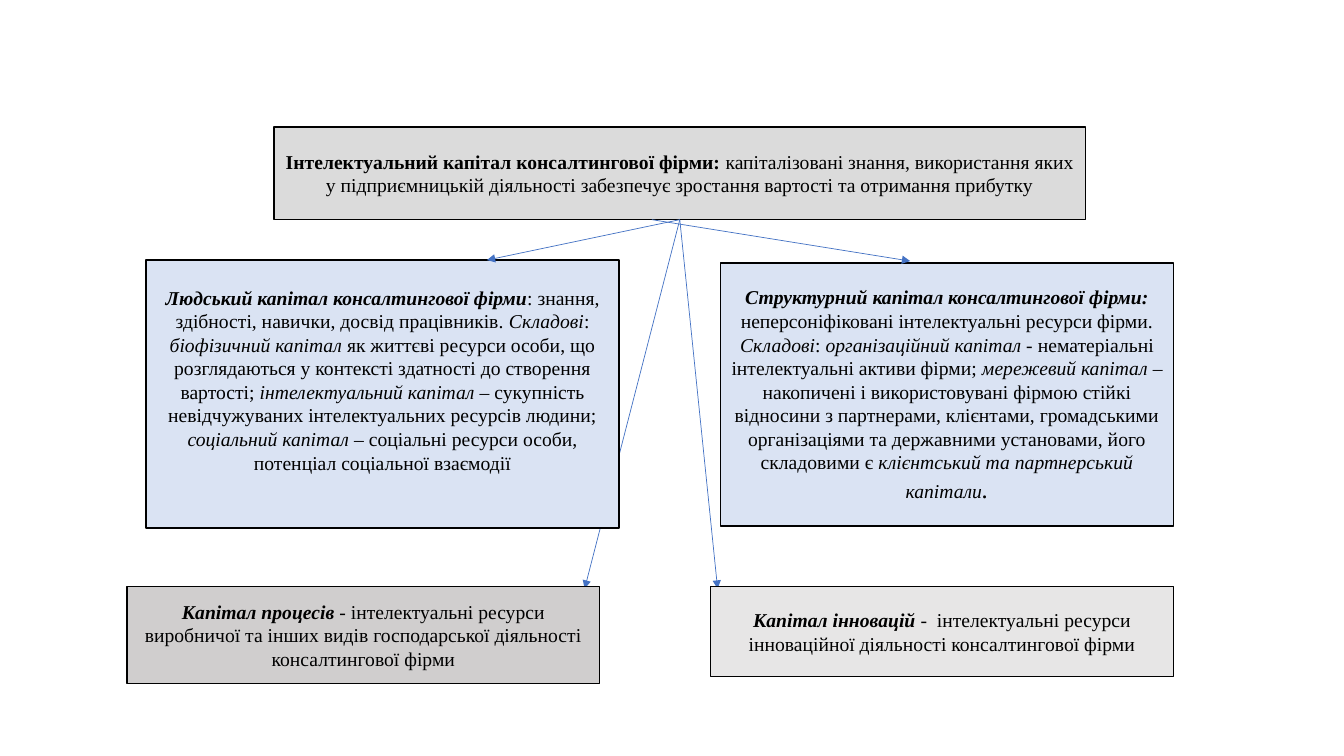
from collections import namedtuple

from lxml import etree
from pptx import Presentation
from pptx.dml import color
from pptx.enum import shapes, text
from pptx.oxml import ns
from pptx.util import Pt

Box = namedtuple("Box", "left top width height")

FONT = "Times New Roman"
BLACK, BLUE, ARROW_BLUE = "000000", "DAE3F3", "4472C4"

# Run formats
PLAIN = {"bold": False, "italic": False, "size": Pt(14)}
BOLD = {**PLAIN, "bold": True}
ITALIC = {**PLAIN, "italic": True}
TERM = {**BOLD, "italic": True}
FULL_STOP = {**ITALIC, "size": Pt(18)}

# Places of the boxes, in points
CAPITAL = Box(195.8, 90.7, 579.6, 66.2)
HUMAN = Box(104.4, 185.8, 337.7, 191.5)
STRUCTURAL = Box(514.8, 187.9, 323.3, 187.9)
PROCESSES = Box(90.7, 419, 337.7, 69.1)
INNOVATIONS = Box(507.6, 419, 330.5, 64.1)

CAPITAL_TEXT = [
    (BOLD, "Інтелектуальний капітал консалтингової фірми: "),
    (PLAIN, "капіталізовані знання, використання яких у підприємницькій "
            "діяльності забезпечує зростання вартості та отримання прибутку"),
]
HUMAN_TEXT = [
    (TERM, "Людський капітал консалтингової фірми"),
    (PLAIN, ": знання, здібності, навички, досвід працівників. "),
    (ITALIC, "Складові"),
    (PLAIN, ": "),
    (ITALIC, "біофізичний капітал "),
    (PLAIN, "як життєві ресурси особи, що розглядаються у контексті "
            "здатності до створення вартості; "),
    (ITALIC, "інтелектуальний капітал "),
    (PLAIN, "– сукупність невідчужуваних інтелектуальних ресурсів людини; "),
    (ITALIC, "соціальний капітал "),
    (PLAIN, "– соціальні ресурси особи, потенціал соціальної взаємодії"),
]
STRUCTURAL_TEXT = [
    (TERM, "Структурний капітал консалтингової фірми:"),
    (PLAIN, " неперсоніфіковані інтелектуальні ресурси фірми. "),
    (ITALIC, "Складові"),
    (PLAIN, ": "),
    (ITALIC, "організаційний капітал -"),
    (PLAIN, " нематеріальні інтелектуальні активи фірми; "),
    (ITALIC, "мережевий капітал "),
    (PLAIN, "– накопичені і використовувані фірмою стійкі відносини з "
            "партнерами, клієнтами, громадськими організаціями та державними "
            "установами, його складовими є "),
    (ITALIC, "клієнтський та партнерський капітали"),
    (FULL_STOP, "."),
]
PROCESSES_TEXT = [
    (TERM, "Капітал процесів "),
    (PLAIN, "- інтелектуальні ресурси виробничої та інших видів "
            "господарської діяльності консалтингової фірми"),
]
INNOVATIONS_TEXT = [
    (TERM, "Капітал інновацій "),
    (PLAIN, "-  інтелектуальні ресурси інноваційної діяльності "
            "консалтингової фірми"),
]


def rgb(hex_string):
    return color.RGBColor.from_string(hex_string)


def draw_definition(slide, box, fill, runs, bottom_inset=3.6):
    """Outlined box with a centred definition."""
    panel = slide.shapes.add_shape(shapes.MSO_SHAPE.RECTANGLE, *map(Pt, box))
    panel.shadow.inherit = False
    panel.fill.solid()
    panel.fill.fore_color.rgb = rgb(fill)
    panel.line.color.rgb = rgb(BLACK)
    panel.line.width = Pt(1)

    frame = panel.text_frame
    frame.word_wrap = True
    frame.vertical_anchor = text.MSO_ANCHOR.MIDDLE
    frame.margin_bottom = Pt(bottom_inset)
    definition = frame.paragraphs[0]
    definition.alignment = text.PP_ALIGN.CENTER
    for formats, words in runs:
        run = definition.add_run()
        run.text = words
        run.font.name = FONT
        run.font.color.rgb = rgb(BLACK)
        for name, value in formats.items():
            setattr(run.font, name, value)


def draw_arrow(slide, source, target, tip_offset, tip_drop=0, start_shift=0):
    """Arrow from the source's bottom centre to the target's top edge."""
    start = (source.left + source.width / 2 + start_shift,
             source.top + source.height)
    tip = (target.left + tip_offset, target.top + tip_drop)
    arrow = slide.shapes.add_connector(
        shapes.MSO_CONNECTOR.STRAIGHT, *map(Pt, start + tip))
    arrow.line.color.rgb = rgb(ARROW_BLUE)
    arrow.line.width = Pt(0.5)
    # Arrowhead and empty effect list
    line = arrow.line._get_or_add_ln()
    etree.SubElement(line, ns.qn("a:tailEnd"), type="triangle")
    etree.SubElement(arrow._element.spPr, ns.qn("a:effectLst"))


def draw_capital_scheme(slide):
    # Long arrows lie behind the boxes
    draw_arrow(slide, CAPITAL, PROCESSES, 326.9, tip_drop=1.5)
    draw_arrow(slide, CAPITAL, INNOVATIONS, 5, tip_drop=1.5)

    # Definitions
    draw_definition(slide, CAPITAL, "DBDBDB", CAPITAL_TEXT)
    draw_definition(slide, HUMAN, BLUE, HUMAN_TEXT, bottom_inset=24)
    draw_definition(slide, STRUCTURAL, BLUE, STRUCTURAL_TEXT)
    draw_definition(slide, PROCESSES, "D0CECE", PROCESSES_TEXT)
    draw_definition(slide, INNOVATIONS, "E7E6E6", INNOVATIONS_TEXT)

    # Short arrows lie in front
    draw_arrow(slide, CAPITAL, HUMAN, 243.4)
    draw_arrow(slide, CAPITAL, STRUCTURAL, 135.4, tip_drop=-1.4,
               start_shift=-20)


def main():
    deck = Presentation()
    deck.slide_width, deck.slide_height = Pt(960), Pt(540)
    draw_capital_scheme(deck.slides.add_slide(deck.slide_layouts[6]))
    deck.save("out.pptx")


if __name__ == "__main__":
    main()
